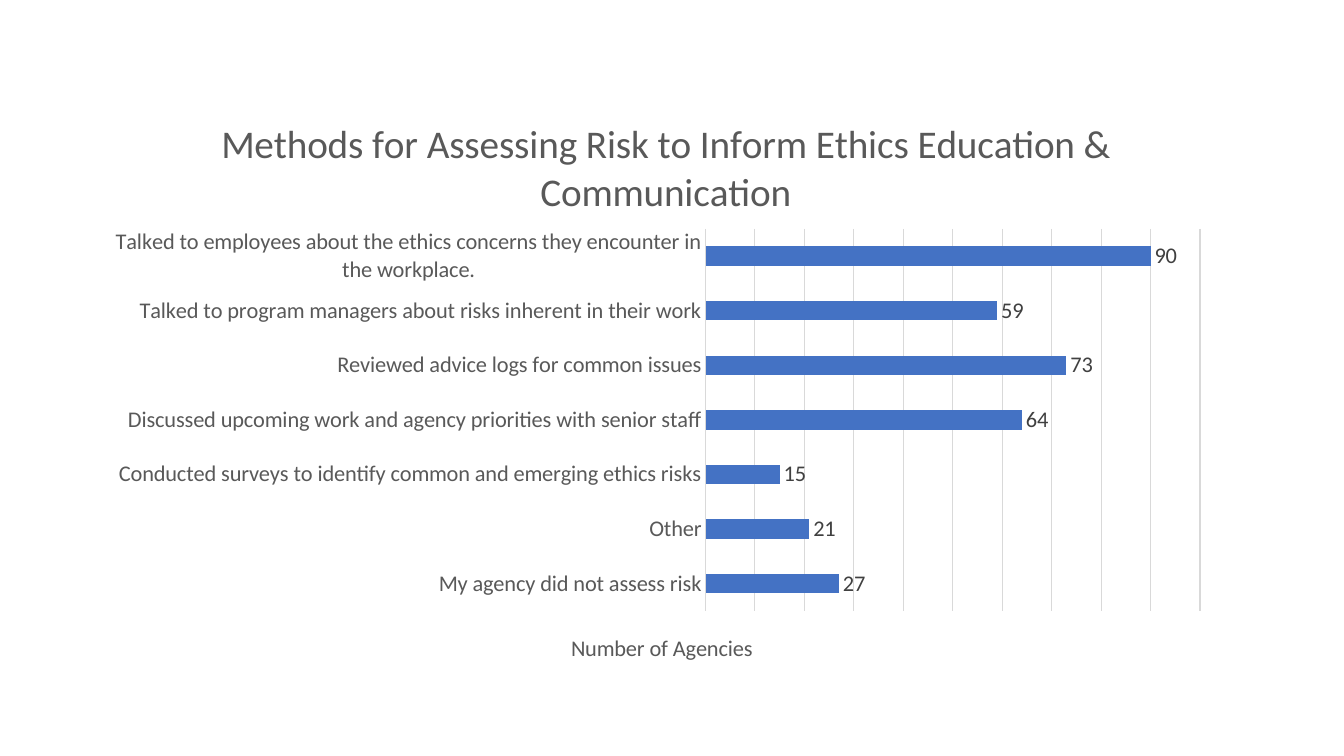
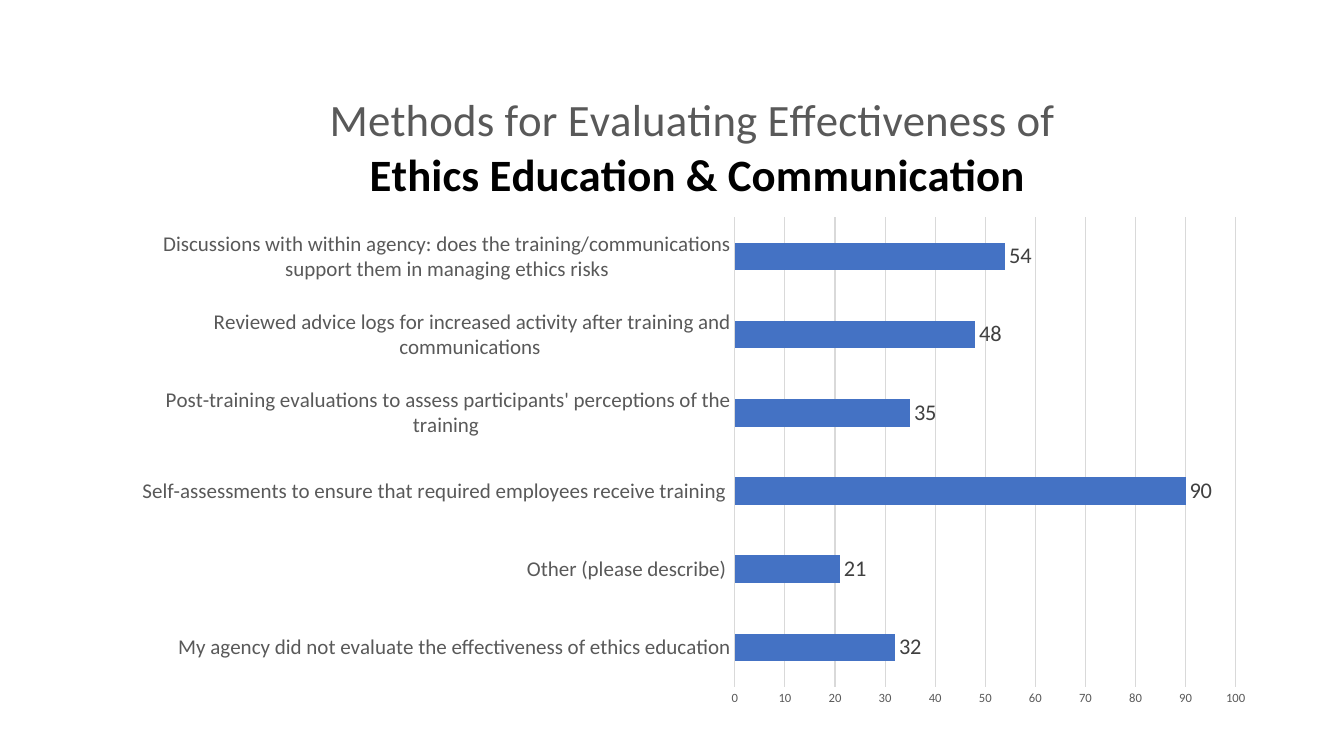
from lxml import etree
from pptx import Presentation
from pptx.chart.data import CategoryChartData
from pptx.dml.color import RGBColor
from pptx.enum.chart import (XL_CHART_TYPE as ChartType, XL_LABEL_POSITION as LabelPosition,
                             XL_TICK_LABEL_POSITION as TickLabels, XL_TICK_MARK as TickMark)
from pptx.oxml.ns import qn
from pptx.util import Pt

PX = 9525
SLIDE_SIZE = (1280, 720)
FONT = "Calibri"
BLACK, DARK, GREY, RULE, BAR = "000000", "404040", "595959", "D9D9D9", "4472C4"

RISK_METHODS = [
    ("My agency did not assess risk", 27),
    ("Other", 21),
    ("Conducted surveys to identify common and emerging ethics risks", 15),
    ("Discussed upcoming work and agency priorities with senior staff", 64),
    ("Reviewed advice logs for common issues", 73),
    ("Talked to program managers about risks inherent in their work", 59),
    ("Talked to employees about the ethics concerns they encounter in the workplace.", 90),
]
EVALUATION_METHODS = [
    ("My agency did not evaluate the effectiveness of ethics education", 32),
    ("Other (please describe) ", 21),
    ("Self-assessments to ensure that required employees receive training ", 90),
    ("Post-training evaluations to assess participants' perceptions of the training ", 35),
    ("Reviewed advice logs for increased activity after training and communications ", 48),
    ("Discussions with within agency: does the training/communications "
     "support them in managing ethics risks", 54),
]


def color(hex_string):
    return RGBColor.from_string(hex_string)


def style_font(font, size, hex_string, bold=False):
    font.name, font.size, font.bold = FONT, Pt(size), bold
    font.color.rgb = color(hex_string)


def style_line(line, hex_string):
    line.width = Pt(0.75)
    line.color.rgb = color(hex_string)


def set_layout(element, frame, left, top, width=None, height=None):
    """Pin a chart part to slide px, as fractions of the chart frame."""
    layout = element.find(qn("c:layout"))
    if layout is None:
        layout = etree.Element(qn("c:layout"))
        element.insert(0, layout)
    x, y, frame_width, frame_height = frame
    manual = etree.SubElement(layout, qn("c:manualLayout"))
    values = [("xMode", "edge"), ("yMode", "edge"),
              ("x", (left - x) / frame_width), ("y", (top - y) / frame_height)]
    if width:
        values.insert(0, ("layoutTarget", "inner"))
        values += [("w", width / frame_width), ("h", height / frame_height)]
    for tag, value in values:
        text = value if isinstance(value, str) else f"{value:.4f}"
        etree.SubElement(manual, qn(f"c:{tag}")).set("val", text)


def write_title(title, text, size, frame, position):
    """Fill a title; a second line is bold and black."""
    title.text_frame.text = text
    for index, paragraph in enumerate(title.text_frame.paragraphs):
        for run in paragraph.runs:
            style_font(run.font, size, BLACK if index else GREY, bold=index > 0)
    set_layout(title._element, frame, *position)


def add_bar_chart(slide, frame, methods, plot_area, label_size):
    data = CategoryChartData()
    data.categories = [method for method, _ in methods]
    data.add_series("Series 1", [agencies for _, agencies in methods])
    chart = slide.shapes.add_chart(
        ChartType.BAR_CLUSTERED, *(length * PX for length in frame), data).chart
    chart.has_legend = False
    style_font(chart.font, label_size, BLACK)
    set_layout(chart._chartSpace.chart.plotArea, frame, *plot_area)

    plot = chart.plots[0]
    plot.gap_width = 182
    plot.vary_by_categories = False
    bars = plot.series[0].format.fill
    bars.solid()
    bars.fore_color.rgb = color(BAR)
    plot.has_data_labels = True
    labels = plot.data_labels
    labels.show_value = True
    labels.position = LabelPosition.OUTSIDE_END
    style_font(labels.font, 16, DARK)

    methods_axis, agencies_axis = chart.category_axis, chart.value_axis
    for axis, size in ((methods_axis, label_size), (agencies_axis, 9)):
        axis.major_tick_mark = axis.minor_tick_mark = TickMark.NONE
        style_font(axis.tick_labels.font, size, GREY)
    style_line(methods_axis.format.line, RULE)
    agencies_axis.format.line.fill.background()
    agencies_axis.minimum_scale, agencies_axis.maximum_scale = 0, 100
    agencies_axis.major_unit = 10
    agencies_axis.has_major_gridlines = True
    style_line(agencies_axis.major_gridlines.format.line, RULE)
    return chart


def build_risk_slide(slide):
    frame = (89, 78, 1075, 570)
    chart = add_bar_chart(slide, frame, RISK_METHODS, (672, 218, 471, 364), 16)
    write_title(chart.chart_title,
                "Methods for Assessing Risk to Inform Ethics Education & Communication",
                28, frame, (204, 105))
    chart.value_axis.tick_label_position = TickLabels.NONE
    write_title(chart.value_axis.axis_title, "Number of Agencies", 16, frame, (540, 599))


def build_evaluation_slide(slide):
    frame = (114, 61, 1094, 623)
    chart = add_bar_chart(slide, frame, EVALUATION_METHODS, (700, 207, 477, 447), 15)
    write_title(chart.chart_title,
                "Methods for Evaluating Effectiveness of \nEthics Education & Communication",
                32, frame, (311, 84))


def main():
    deck = Presentation()
    deck.slide_width, deck.slide_height = (length * PX for length in SLIDE_SIZE)
    blank = deck.slide_layouts[6]
    for build in (build_risk_slide, build_evaluation_slide):
        build(deck.slides.add_slide(blank))
    deck.save("out.pptx")


if __name__ == "__main__":
    main()
